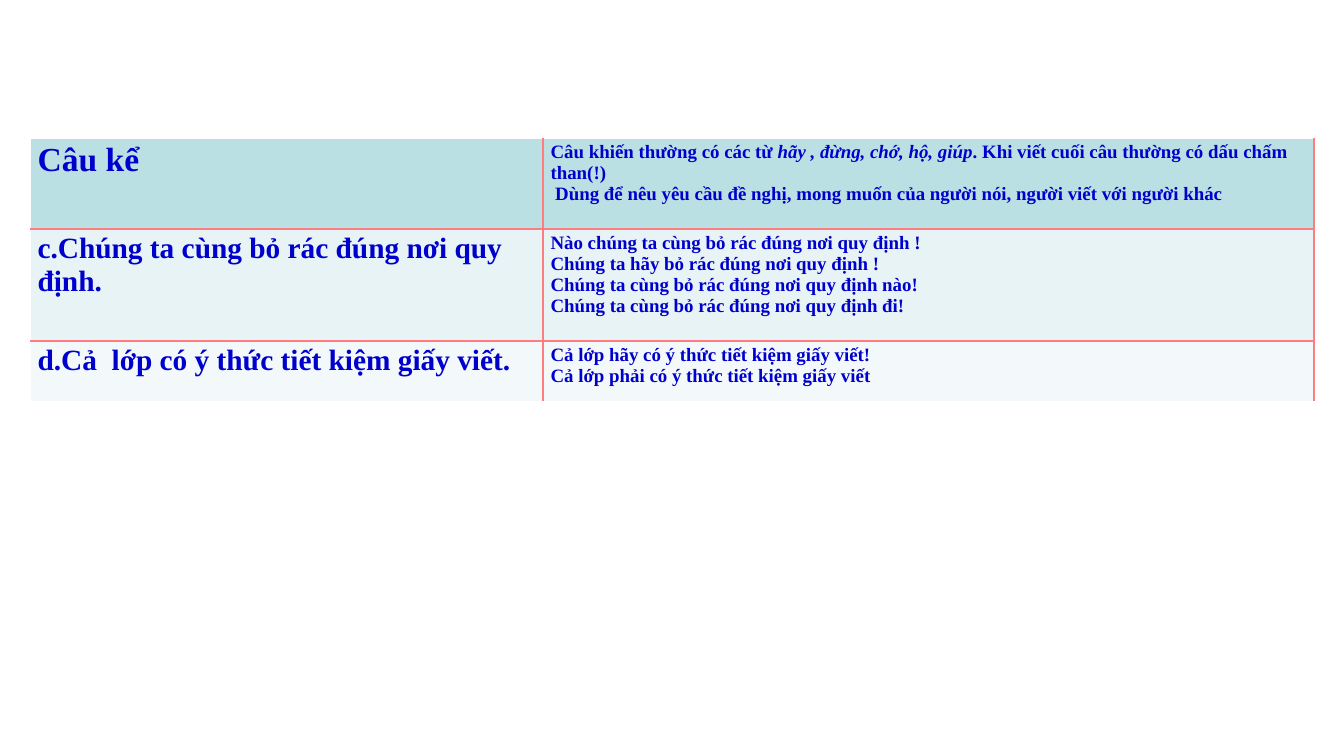
from typing import NamedTuple

from lxml import etree
from pptx import Presentation
from pptx import util as u
from pptx.dml.color import RGBColor
from pptx.oxml.ns import qn

EMU_PER_PX = 12111
COLORS = {
    "text": "0000CC",
    "header": "BBE0E3",
    "row": "E7F3F4",
    "last_row": "F3F9FA",
    "rule": "FF7C80",
    "edge": "FFFFFF",
}
FONT = "Times New Roman"
TABLE_LEFT, TABLE_TOP = 30, 138
COLUMN_WIDTHS = (513, 771)


class Run(NamedTuple):
    text: str
    italic: bool = False


class Row(NamedTuple):
    height: int
    fill: str
    sentence: str
    sentence_size: int
    requests: list[list[Run]]


ROWS = [
    Row(91, "header", "Câu kể", 32, [
        [
            Run("Câu khiến thường có các từ "),
            Run("hãy , đừng, chớ, hộ, giúp", italic=True),
            Run(". Khi viết cuối câu thường có dấu chấm than(!)"),
        ],
        [Run(" Dùng để nêu yêu cầu đề nghị, mong muốn của người nói, "
             "người viết với người khác")],
    ]),
    Row(112, "row", "c.Chúng ta cùng bỏ rác đúng nơi quy định.", 28, [
        [Run("Nào chúng ta cùng bỏ rác đúng nơi quy định !")],
        [Run("Chúng ta hãy bỏ rác đúng nơi quy định !")],
        [Run("Chúng ta cùng bỏ rác đúng nơi quy định nào!")],
        [Run("Chúng ta cùng bỏ rác đúng nơi quy định đi!")],
    ]),
    Row(60, "last_row", "d.Cả  lớp có ý thức tiết kiệm giấy viết.", 28, [
        [Run("Cả lớp hãy có ý thức tiết kiệm giấy viết!")],
        [Run("Cả lớp phải có ý thức tiết kiệm giấy viết")],
    ]),
]


def px(length: int) -> u.Emu:
    return u.Emu(length * EMU_PER_PX)


def write_text(frame, paragraphs: list[list[Run]], *, size: int,
               color: str = "text", bold: bool = True) -> None:
    for index, runs in enumerate(paragraphs):
        paragraph = frame.add_paragraph() if index else frame.paragraphs[0]
        for item in runs:
            run = paragraph.add_run()
            run.text = item.text
            run.font.name = FONT
            run.font.size = u.Pt(size)
            run.font.bold = bold
            run.font.italic = item.italic
            run.font.color.rgb = RGBColor.from_string(COLORS[color])


def set_borders(cell, outer_sides: str) -> None:
    """Draw thin white lines on the outer sides and thick rules on the others."""
    properties = cell._tc.get_or_add_tcPr()
    for index, side in enumerate("LRTB"):
        color, width = ("edge", 1) if side in outer_sides else ("rule", 3)
        line = etree.Element(qn(f"a:ln{side}"), w=str(u.Pt(width)))
        fill = etree.SubElement(line, qn("a:solidFill"))
        etree.SubElement(fill, qn("a:srgbClr"), val=COLORS[color])
        properties.insert(index, line)


def add_sentence_table(slide, rows: list[Row]) -> None:
    table = slide.shapes.add_table(
        len(rows), len(COLUMN_WIDTHS), px(TABLE_LEFT), px(TABLE_TOP),
        px(sum(COLUMN_WIDTHS)), px(sum(row.height for row in rows))).table
    table.first_row = False
    table.horz_banding = False
    for column, width in zip(table.columns, COLUMN_WIDTHS):
        column.width = px(width)
    for row_index, row in enumerate(rows):
        table.rows[row_index].height = px(row.height)
        contents = [([[Run(row.sentence)]], row.sentence_size), (row.requests, 18)]
        for column_index, (paragraphs, size) in enumerate(contents):
            cell = table.cell(row_index, column_index)
            cell.fill.solid()
            cell.fill.fore_color.rgb = RGBColor.from_string(COLORS[row.fill])
            write_text(cell.text_frame, paragraphs, size=size)
            outer_sides = "L" if column_index == 0 else ""
            if row_index == 0:
                outer_sides += "T"
            if row_index == len(rows) - 1:
                outer_sides += "B"
            set_borders(cell, outer_sides)


def main() -> None:
    presentation = Presentation()
    presentation.slide_width = px(1344)
    presentation.slide_height = px(755)
    slide = presentation.slides.add_slide(presentation.slide_layouts[6])
    add_sentence_table(slide, ROWS)
    presentation.save("out.pptx")


if __name__ == "__main__":
    main()
